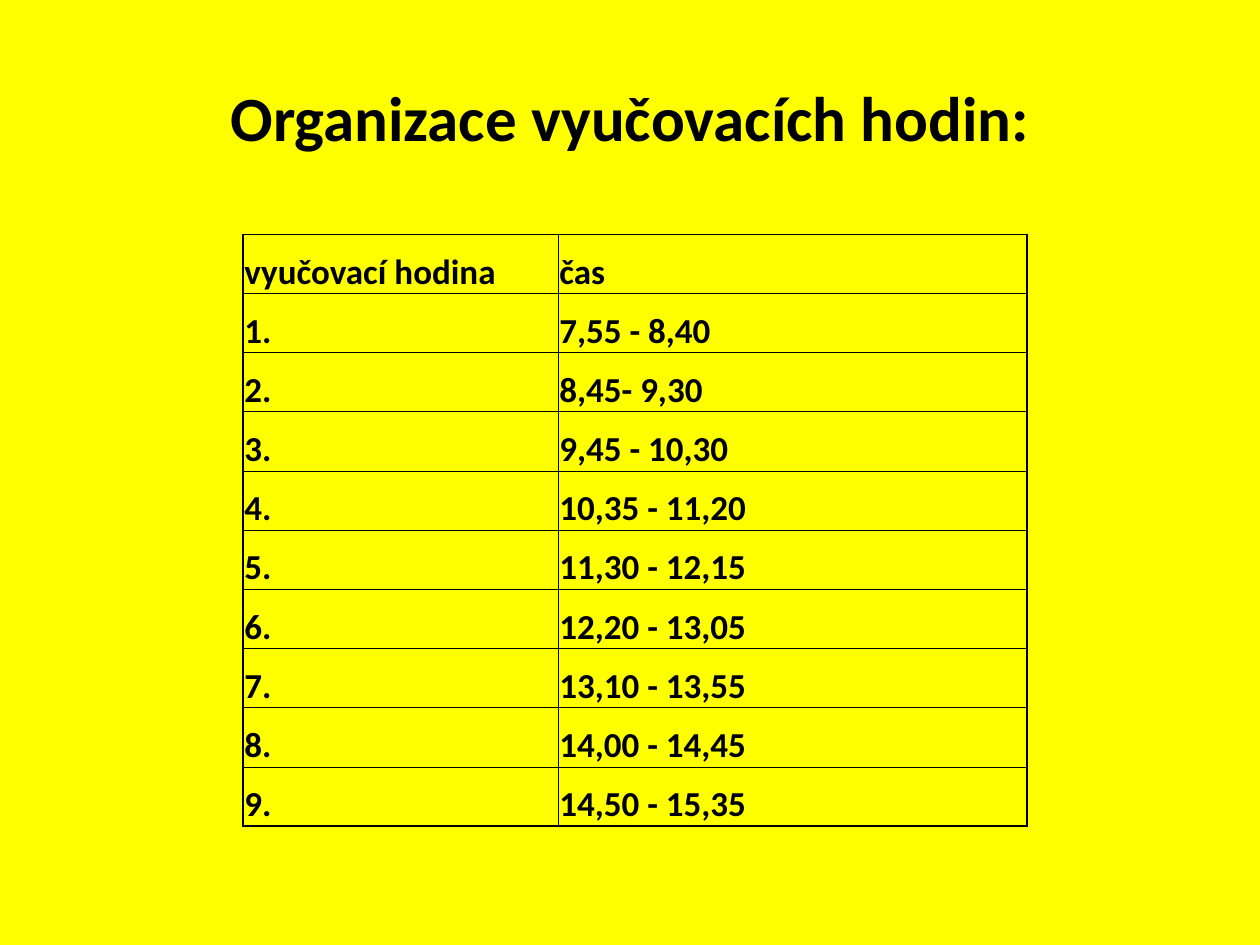
"""Build a slide with the timetable of school lessons."""
import pptx
import pptx.dml.color
import pptx.enum.text
import pptx.oxml.ns
import pptx.util
from lxml import etree

THEME = {
    "background": pptx.dml.color.RGBColor(0xFF, 0xFF, 0x00),
    "ink": pptx.dml.color.RGBColor(0x00, 0x00, 0x00),
    "font": "Calibri",
    "title_size": pptx.util.Pt(36),
    "table_size": pptx.util.Pt(20),
    "outer_line": pptx.util.Pt(1),
    "inner_line": pptx.util.Pt(0.5),
}
LESSON_TIMES = [
    "7,55 - 8,40", "8,45- 9,30", "9,45 - 10,30", "10,35 - 11,20", "11,30 - 12,15",
    "12,20 - 13,05", "13,10 - 13,55", "14,00 - 14,45", "14,50 - 15,35",
]
ROWS = [("vyučovací hodina", "čas")]
ROWS += [(f"{number}.", time) for number, time in enumerate(LESSON_TIMES, 1)]
COLUMN_WIDTHS = [pptx.util.Inches(2.5), pptx.util.Inches(3.72)]
ROW_HEIGHT = pptx.util.Inches(0.47)


def add_text(paragraph, text, size):
    run = paragraph.add_run()
    run.text = text
    run.font.name = THEME["font"]
    run.font.size = size
    run.font.bold = True
    run.font.color.rgb = THEME["ink"]


def add_border(cell, side, width):
    properties = cell._tc.get_or_add_tcPr()
    line = etree.SubElement(properties, pptx.oxml.ns.qn(f"a:ln{side}"), w=str(width))
    fill = etree.SubElement(line, pptx.oxml.ns.qn("a:solidFill"))
    etree.SubElement(fill, pptx.oxml.ns.qn("a:srgbClr"), val=str(THEME["ink"]))


presentation = pptx.Presentation()
presentation.slide_width = pptx.util.Inches(10)
presentation.slide_height = pptx.util.Inches(7.5)
slide = presentation.slides.add_slide(presentation.slide_layouts[5])
slide.background.fill.solid()
slide.background.fill.fore_color.rgb = THEME["background"]

title = slide.shapes.title
title.left = int(presentation.slide_width * 0.05)
title.top = int(presentation.slide_height * 0.04)
title.width = int(presentation.slide_width * 0.9)
title.height = pptx.util.Inches(1.25)
title.text_frame.vertical_anchor = pptx.enum.text.MSO_ANCHOR.MIDDLE
title_paragraph = title.text_frame.paragraphs[0]
title_paragraph.alignment = pptx.enum.text.PP_ALIGN.CENTER
add_text(title_paragraph, "Organizace vyučovacích hodin:", THEME["title_size"])

timetable = slide.shapes.add_table(
    len(ROWS), len(COLUMN_WIDTHS), pptx.util.Inches(1.93), pptx.util.Inches(1.86),
    sum(COLUMN_WIDTHS), ROW_HEIGHT * len(ROWS),
).table
timetable.first_row = False
timetable.horz_banding = False
for column, width in zip(timetable.columns, COLUMN_WIDTHS):
    column.width = width

for row_index, texts in enumerate(ROWS):
    timetable.rows[row_index].height = ROW_HEIGHT
    for column_index, text in enumerate(texts):
        cell = timetable.cell(row_index, column_index)
        cell.vertical_anchor = pptx.enum.text.MSO_ANCHOR.BOTTOM
        cell.margin_left = cell.margin_right = cell.margin_top = pptx.util.Inches(0.01)
        cell.margin_bottom = 0
        outer_sides = {
            "L": column_index == 0,
            "R": column_index == len(texts) - 1,
            "T": row_index == 0,
            "B": row_index == len(ROWS) - 1,
        }
        for side, is_outer in outer_sides.items():
            add_border(cell, side, THEME["outer_line" if is_outer else "inner_line"])
        cell.fill.background()
        add_text(cell.text_frame.paragraphs[0], text, THEME["table_size"])

presentation.save("out.pptx")
